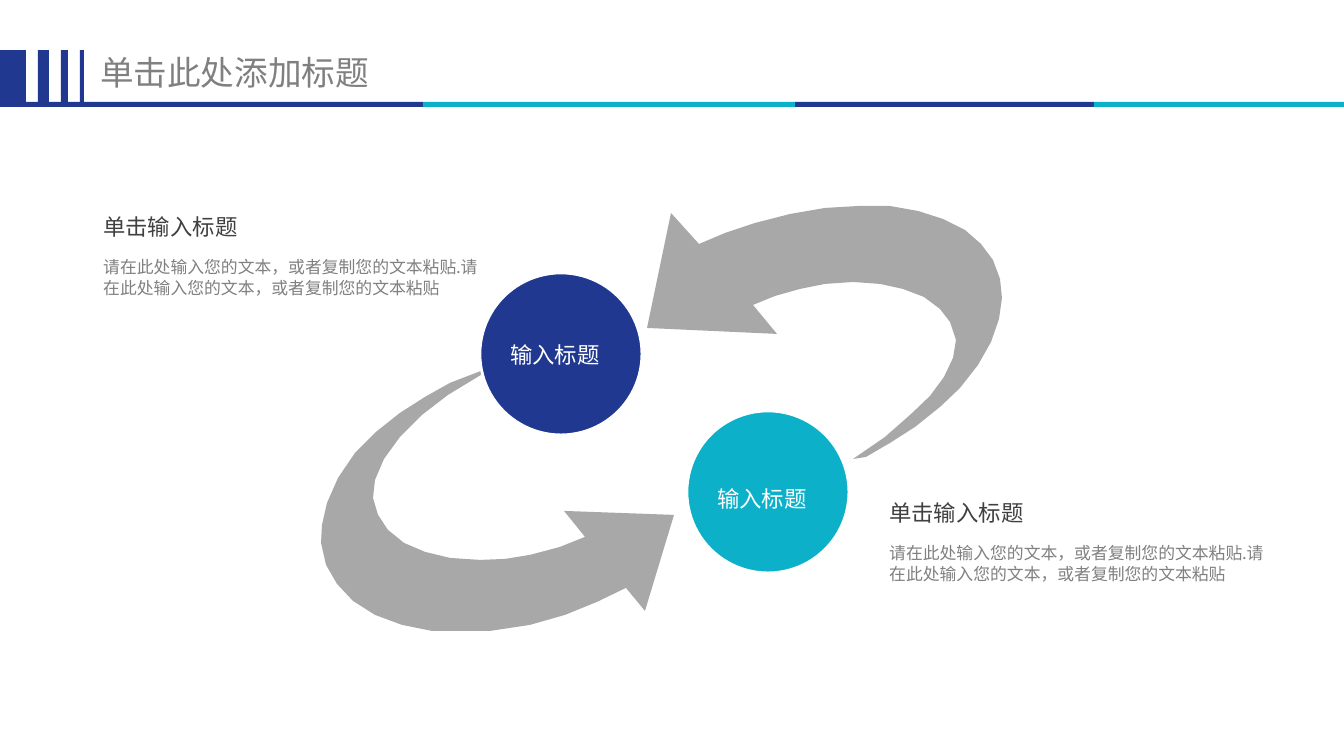
from dataclasses import dataclass

from lxml import etree
from pptx import Presentation
from pptx import util as u
from pptx.dml.color import RGBColor
from pptx.enum import shapes, text
from pptx.oxml.ns import qn

PX = 914400 / 134.4


@dataclass(frozen=True)
class Theme:
    """Colours, font and type sizes of the deck."""
    navy: str = "20388F"
    teal: str = "0CB1C9"
    arrow: str = "A8A8A8"
    white: str = "FFFFFF"
    grey: str = "808080"
    dark: str = "404040"
    font: str = "Noto Sans CJK SC"
    title: int = 18
    heading: int = 12
    body: int = 9


THEME = Theme()

RETURN_ARROW = [
    (206, 253), (219, 251), (243, 237), (268, 221), (293, 201), (313, 182),
    (331, 159), (344, 136), (352, 113), (355, 92), (353, 73), (346, 54),
    (334, 38), (318, 24), (296, 13), (271, 5), (243, 0), (211, 0), (178, 2),
    (143, 8), (108, 17), (78, 27), (52, 38), (24, 7), (0, 122), (130, 128),
    (106, 99), (128, 90), (153, 83), (178, 78), (206, 76), (233, 78),
    (256, 83), (277, 91), (293, 103), (303, 116), (309, 134), (306, 152),
    (297, 171), (283, 190), (263, 209), (238, 231)]

FORWARD_ARROW = [
    (160, 0), (129, 12), (104, 26), (79, 42), (55, 61), (34, 82), (17, 107),
    (6, 132), (1, 154), (0, 172), (5, 194), (16, 213), (32, 230), (54, 244),
    (81, 254), (111, 260), (169, 260), (209, 254), (244, 244), (276, 231),
    (305, 217), (324, 240), (353, 144), (243, 140), (264, 166), (239, 176),
    (209, 184), (184, 188), (159, 189), (129, 187), (104, 181), (83, 172),
    (67, 159), (57, 144), (52, 127), (54, 109), (63, 88), (79, 66),
    (101, 44), (127, 24), (160, 4)]


def px(*lengths):
    """Turn pixel lengths into EMU."""
    return [u.Emu(round(length * PX)) for length in lengths]


def apply(target, formats):
    """Set each attribute of the target from a dict."""
    for name, value in formats.items():
        setattr(target, name, value)


def paint(shape, colour, line=None):
    """Give a shape a flat fill and an optional outline."""
    shape.shadow.inherit = False
    shape.fill.solid()
    shape.fill.fore_color.rgb = RGBColor.from_string(colour)
    if line:
        shape.line.color.rgb = RGBColor.from_string(line)
        shape.line.width = u.Pt(1.5)
    else:
        shape.line.fill.background()


def add_shape(page, kind, box, colour, line=None):
    """Add a painted preset shape."""
    shape = page.shapes.add_shape(kind, *px(*box))
    paint(shape, colour, line)


def add_text(page, box, words, size, colour, frame=None, para=None):
    """Add a wrapped text box holding one paragraph."""
    text_frame = page.shapes.add_textbox(*px(*box)).text_frame
    apply(text_frame, {"word_wrap": True, **(frame or {})})
    paragraph = text_frame.paragraphs[0]
    apply(paragraph, para or {})
    span = paragraph.add_run()
    span.text = words
    span.font.color.rgb = RGBColor.from_string(colour)
    apply(span.font, {"size": u.Pt(size), "name": THEME.font})
    east_asian = etree.SubElement(span.font._element, qn("a:ea"))
    east_asian.set("typeface", THEME.font)


def add_header(page, box, title):
    """Draw the bars, the title and the two-colour rule."""
    left, top, width, height = box
    side, edge = px(9, 5)
    add_text(page, (left + 91, top, 359, 51), title, THEME.title, THEME.grey,
             {"margin_left": side, "margin_right": side,
              "margin_top": edge, "margin_bottom": edge})
    rectangle = shapes.MSO_SHAPE.RECTANGLE
    for start, bar_width in ((0, 26), (38, 11), (61, 7), (80, 4)):
        add_shape(page, rectangle, (left + start, top + 3, bar_width, 52), THEME.navy)
    stops = (0, 423, 795, 1094, width)
    for index, (start, end) in enumerate(zip(stops, stops[1:])):
        colour = (THEME.navy, THEME.teal)[index % 2]
        add_shape(page, rectangle,
                  (left + start, top + height - 5, end - start, 5), colour)


def add_arrow(page, origin, outline):
    """Draw a curved arrow from its outline."""
    builder = page.shapes.build_freeform(*outline[0], scale=PX)
    builder.add_line_segments(outline[1:], close=True)
    paint(builder.convert_to_shape(*px(*origin)), THEME.arrow)


def add_node(page, box, words, colour, label_top):
    """Draw a circle with its label."""
    left, top, width, height = box
    add_shape(page, shapes.MSO_SHAPE.OVAL, box, colour, THEME.white)
    add_text(page, (left - 19, top + label_top, width + 26, 43), words,
             THEME.heading, THEME.white,
             para={"alignment": text.PP_ALIGN.CENTER, "line_spacing": 1.2})


def add_note(page, box, heading, body):
    """Place a heading over its body text."""
    left, top, width, height = box
    add_text(page, (left, top + 55, width - 21, height - 55), body,
             THEME.body, THEME.grey, {"margin_top": 0, "margin_bottom": 0},
             {"space_before": u.Pt(8.4), "space_after": u.Pt(8.4)})
    add_text(page, (left, top, width, 43), heading, THEME.heading, THEME.dark,
             {"vertical_anchor": text.MSO_ANCHOR.MIDDLE}, {"line_spacing": 1.2})


def main():
    """Build the deck and save it."""
    deck = Presentation()
    deck.slide_width, deck.slide_height = px(1344, 756)
    page = deck.slides.add_slide(deck.slide_layouts[6])
    add_header(page, (0, 47, 1344, 60), "单击此处添加标题")
    add_arrow(page, (647, 206), RETURN_ARROW)
    add_arrow(page, (321, 371), FORWARD_ARROW)
    add_node(page, (687, 411, 162, 162), "输入标题", THEME.teal, 62)
    add_node(page, (480, 273, 162, 162), "输入标题", THEME.navy, 56)
    sentence = "请在此处输入您的文本，或者复制您的文本粘贴"
    for left, top in ((876, 488), (90, 202)):
        add_note(page, (left, top, 423, 183), "单击输入标题",
                 f"{sentence}.{sentence}")
    deck.save("out.pptx")


if __name__ == "__main__":
    main()
